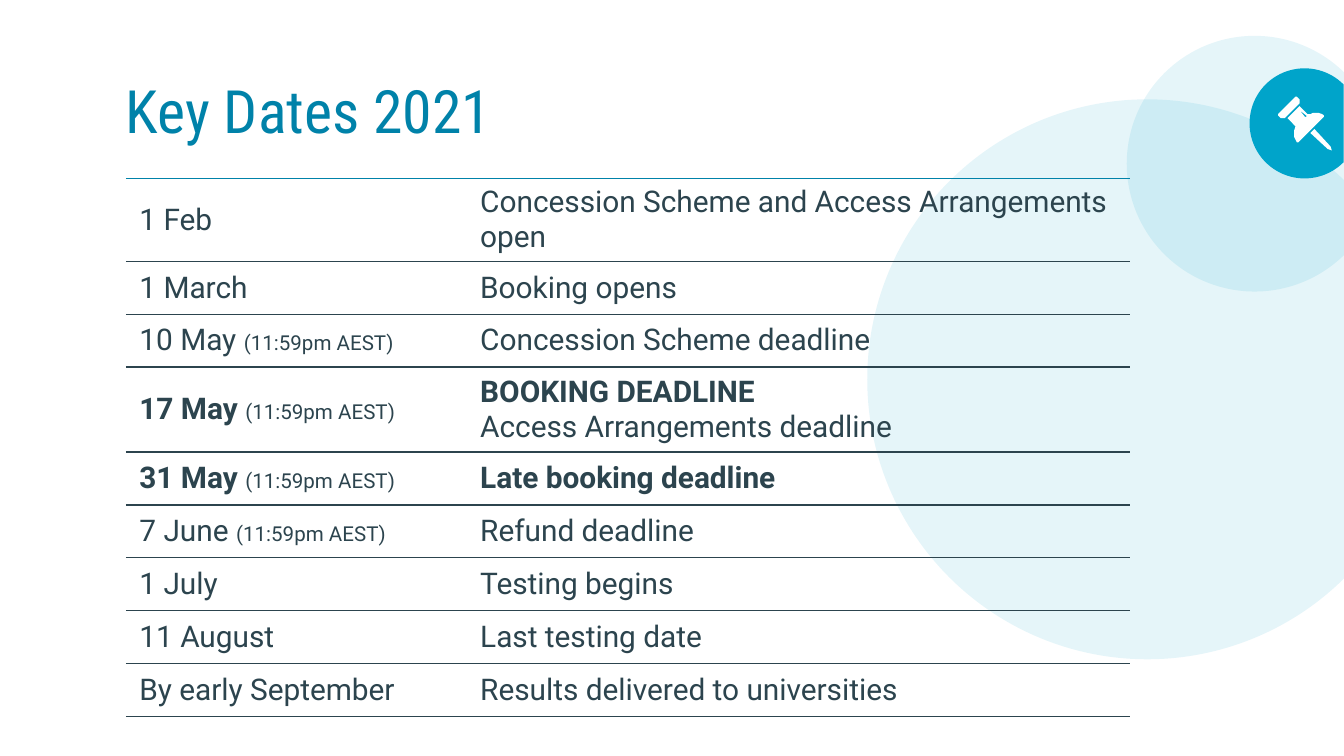
import pptx
import pptx.util
import pptx.dml.color
import pptx.enum.shapes
import pptx.enum.text
import pptx.oxml.ns
import lxml.etree

Pt = pptx.util.Pt
RGB = pptx.dml.color.RGBColor
qn = pptx.oxml.ns.qn
MID = pptx.enum.text.MSO_ANCHOR.MIDDLE

CYAN = RGB(0x00, 0xA4, 0xCA)
TEAL = RGB(0x00, 0x82, 0xA9)
INK = RGB(0x2C, 0x44, 0x4E)
WHITE = RGB(0xFF, 0xFF, 0xFF)

NOTE = "(11:59pm AEST)"
# date, note, events, bold first event
DATES = [
    ("1 Feb", "", ["Concession Scheme and Access Arrangements open"], False),
    ("1 March", "", ["Booking opens"], False),
    ("10 May", NOTE, ["Concession Scheme deadline"], False),
    ("17 May", NOTE, ["BOOKING DEADLINE", "Access Arrangements deadline"], True),
    ("31 May", NOTE, ["Late booking deadline"], True),
    ("7 June", NOTE, ["Refund deadline"], False),
    ("1 July", "", ["Testing begins"], False),
    ("11 August", "", ["Last testing date"], False),
    ("By early September", "", ["Results delivered to universities"], False),
]

# Pushpin outlines, in hundredths of an inch
TIP = [[(978, 96), (990, 109), (991, 112), (988, 111), (975, 99)]]
CAP = [[(964, 72), (965, 72), (966, 73), (967, 74), (967, 77), (966, 78),
        (957, 87), (956, 88), (953, 88), (952, 87), (951, 86), (951, 85)]]
BODY = [
    [(967, 79), (973, 85), (975, 85), (977, 84), (981, 84), (984, 85),
     (985, 86), (985, 87), (984, 88), (967, 105), (966, 106), (965, 106),
     (964, 104), (963, 102), (963, 97), (964, 94), (958, 88)],
    [(967, 81), (967, 82), (971, 87), (972, 87), (972, 86), (967, 82)],
]


def write(para, text, face="Roboto", size=16, bold=False, color=INK):
    run = para.add_run()
    run.text = text
    font = run.font
    font.name, font.size, font.bold = face, Pt(size), bold
    font.color.rgb = color


def rule(cell, tops):
    """Draw the cell's top and bottom lines and leave its sides open."""
    props = cell._tc.get_or_add_tcPr()
    sides = (("lnL", None), ("lnR", None), ("lnT", tops), ("lnB", INK))
    for spot, (tag, color) in enumerate(sides):
        line = lxml.etree.Element(qn("a:" + tag), w=str(Pt(1)))
        if color is None:
            lxml.etree.SubElement(line, qn("a:noFill"))
        else:
            fill = lxml.etree.SubElement(line, qn("a:solidFill"))
            lxml.etree.SubElement(fill, qn("a:srgbClr"), val=str(color))
        props.insert(spot, line)


class Deck:
    def __init__(self):
        self.show = pptx.Presentation()
        self.show.slide_width, self.show.slide_height = Pt(720), Pt(405)
        self.slide = self.show.slides.add_slide(self.show.slide_layouts[5])
        self.shapes = self.slide.shapes

    def paint(self, shape, color, alpha=100):
        shape.shadow.inherit = False
        shape.fill.solid()
        shape.fill.fore_color.rgb = color
        shape.line.fill.background()
        if alpha < 100:
            tint = shape._element.spPr.find(".//" + qn("a:srgbClr"))
            lxml.etree.SubElement(tint, qn("a:alpha"), val=str(alpha * 1000))

    def disc(self, left, top, size, alpha=100):
        """Add a circle cut off at the slide's right edge."""
        kind = pptx.enum.shapes.MSO_SHAPE.CHORD
        shape = self.shapes.add_shape(kind, Pt(left), Pt(top), Pt(size), Pt(size))
        shape.adjustments[0], shape.adjustments[1] = 27, 189
        self.paint(shape, CYAN, alpha)

    def title(self, text):
        box = self.shapes.title
        box.left, box.top, box.width, box.height = Pt(67.5), Pt(31.5), Pt(520), Pt(59)
        frame = box.text_frame
        frame.margin_left = frame.margin_right = 0
        frame.margin_top = frame.margin_bottom = 0
        frame.vertical_anchor, frame.word_wrap = MID, True
        frame.auto_size = pptx.enum.text.MSO_AUTO_SIZE.NONE
        para = frame.paragraphs[0]
        para.alignment = pptx.enum.text.PP_ALIGN.LEFT
        para.line_spacing = 0.9
        write(para, text, face="Roboto Condensed", size=32, color=TEAL)
        self.shapes._spTree.append(box._element)

    def table(self, dates):
        grid = self.shapes.add_table(len(dates), 2, Pt(67.5), Pt(95.6),
                                     Pt(538), Pt(272)).table
        grid.first_row = grid.horz_banding = False
        grid.columns[0].width, grid.columns[1].width = Pt(182.6), Pt(355.4)
        for row, (day, note, events, bold) in enumerate(dates):
            grid.rows[row].height = Pt(28.35 + 17 * (len(events) - 1))
            left, right = grid.cell(row, 0), grid.cell(row, 1)
            for cell in (left, right):
                cell.vertical_anchor = MID
                cell.fill.background()
                rule(cell, INK if row else TEAL)
            para = left.text_frame.paragraphs[0]
            write(para, day + " " if note else day, bold=bold)
            if note:
                write(para, note, size=11)
            frame = right.text_frame
            for spot, event in enumerate(events):
                para = frame.add_paragraph() if spot else frame.paragraphs[0]
                write(para, event, bold=bold and spot == 0)

    def icon(self, parts):
        group = self.shapes.add_group_shape()
        for loops in parts:
            pen = group.shapes.build_freeform(*loops[0][0], scale=Pt(0.72))
            pen.add_line_segments(loops[0][1:])
            for loop in loops[1:]:
                pen.move_to(*loop[0])
                pen.add_line_segments(loop[1:])
            self.paint(pen.convert_to_shape(), WHITE)


def main():
    deck = Deck()
    deck.disc(464.6, 53.2, 300, alpha=10)
    deck.disc(603.6, 19.2, 137, alpha=10)
    deck.title("Key Dates 2021")
    deck.table(DATES)
    deck.disc(669.4, 36.6, 59)
    deck.icon([TIP, CAP, BODY])
    deck.show.save("out.pptx")


if __name__ == "__main__":
    main()
